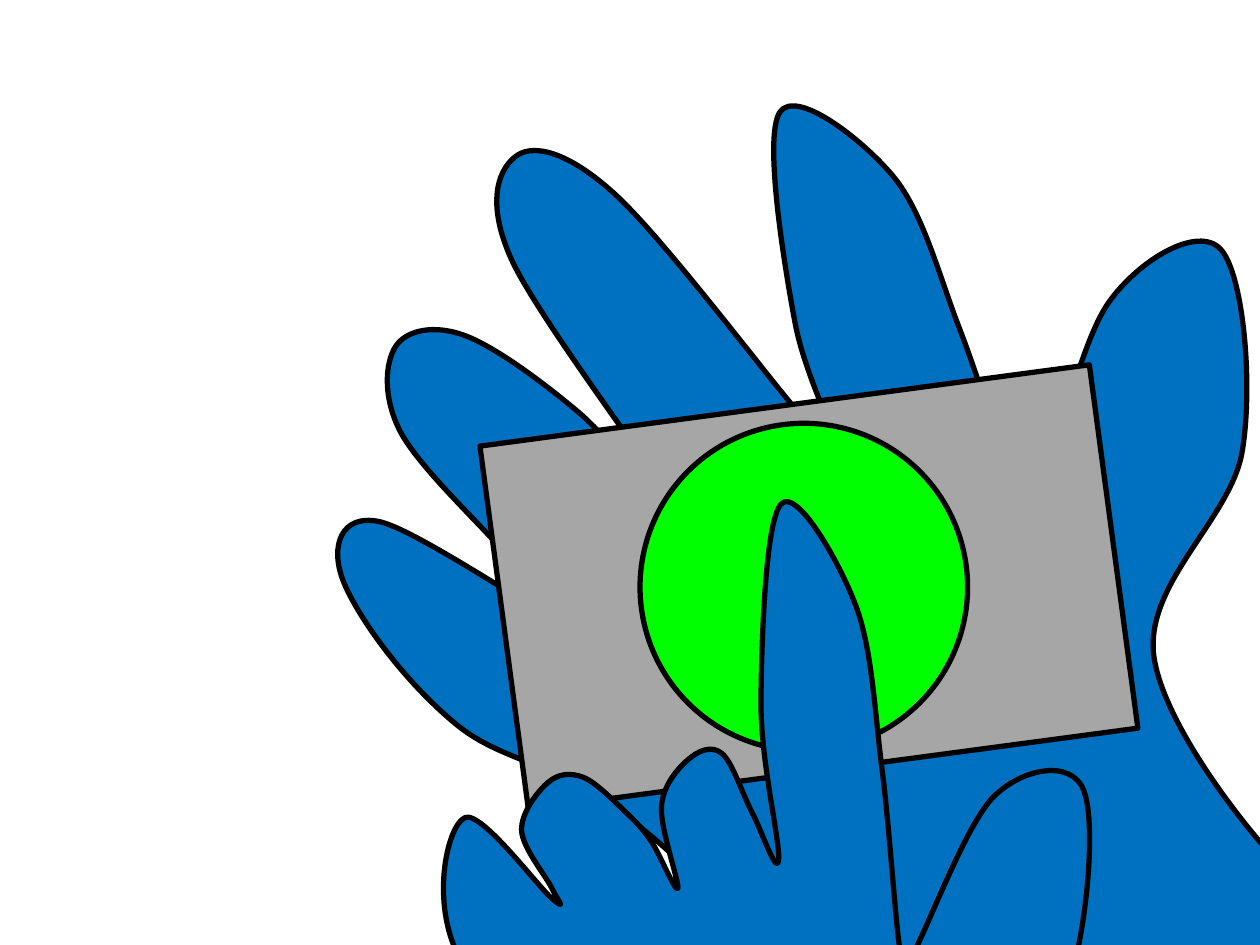
from itertools import chain

from lxml import etree
from pptx import Presentation
from pptx import util as u
from pptx.dml import color
from pptx.enum import shapes
from pptx.oxml import ns

HUES = {"hand": "0070C0", "card": "A6A6A6", "disc": "00FF00", "edge": "000000"}

HOLDING = {
    "wrist": [(10.39, 7.09), (9.16, 5.22)],
    "thumb": [(9.86, 3.58), (9.69, 1.98), (8.8, 2.4), (8.22, 4.05)],
    "index": [(8.09, 3.98), (7.62, 2.62), (7.09, 1.4), (6.19, 0.89), (6.31, 2.56), (6.73, 3.76)],
    "middle": [(6.3, 3.23), (4.88, 1.54), (4.11, 1.23), (4.06, 2.06), (5.43, 4.13)],
    "ring": [(4.59, 3.27), (3.68, 2.66), (3.14, 2.75), (3.18, 3.43), (4.01, 4.39), (4.54, 4.98)],
    "little": [(3.01, 4.14), (2.72, 4.6), (3.61, 5.74)],
    "heel": [(5.3, 6.75), (8.66, 10.27)],
}

PRESSING = {
    "wrist": [(8.72, 12.01), (7.74, 9.04)],
    "thumb": [(8.49, 7.79), (8.6, 6.27), (7.89, 6.32), (7.22, 7.62)],
    "index": [(7.14, 7.52), (7, 6.1), (6.79, 4.8), (6.2, 4), (6.04, 5.57), (6.18, 6.82)],
    "middle": [(5.97, 6.45), (5.73, 5.98), (5.46, 6.03), (5.25, 6.4), (5.38, 7.05)],
    "ring": [(5.17, 6.68), (4.97, 6.45), (4.63, 6.17), (4.35, 6.21), (4.14, 6.59), (4.38, 7.05)],
    "little": [(4.39, 7.14), (3.69, 6.49), (3.6, 7.5)],
    "heel": [(4.69, 9.03), (6.63, 13.47)],
}


def shift(knot, start, end):
    """Move a knot by a sixth of the way from start to end."""
    return tuple(k + (e - s) / 6 for k, s, e in zip(knot, start, end))


def smooth(knots, lead=None):
    """Return the Bezier points of a Catmull-Rom curve, steered at its start by lead."""
    line = [lead or knots[0], *knots, knots[-1]]
    dots = [knots[0]]
    for before, here, there, after in zip(line, line[1:], line[2:], line[3:]):
        dots += [shift(here, before, there), shift(there, after, here), there]
    return dots


class Sketch:
    """Draws outlined shapes in one style on the current slide."""

    def __init__(self, slide, edge=3):
        self.slide = slide
        self.edge = u.Pt(edge)

    def paint(self, shape, hue):
        """Give a shape its fill and outline."""
        shape.shadow.inherit = False
        shape.fill.solid()
        shape.fill.fore_color.rgb = color.RGBColor.from_string(HUES[hue])
        shape.line.color.rgb = color.RGBColor.from_string(HUES["edge"])
        shape.line.width = self.edge
        return shape

    def form(self, kind, mid, size, hue, turn=0):
        """Add a preset shape around its middle."""
        corner = [m - s / 2 for m, s in zip(mid, size)]
        shape = self.slide.shapes.add_shape(kind, *map(u.Inches, (*corner, *size)))
        shape.rotation = turn
        return self.paint(shape, hue)

    def curve(self, knots, hue, lead=None):
        """Add an open outline that runs smoothly through its knots."""
        dots = [(u.Inches(x), u.Inches(y)) for x, y in smooth(knots, lead)]
        pen = self.slide.shapes.build_freeform(*dots[0])
        pen.add_line_segments(dots[1:], close=False)
        shape = pen.convert_to_shape()
        legs = list(shape.element.iter(ns.qn("a:lnTo")))
        track = legs[0].getparent()
        for i in range(0, len(legs), 3):
            bend = etree.SubElement(track, ns.qn("a:cubicBezTo"))
            for leg in legs[i:i + 3]:
                bend.append(leg[0])
                track.remove(leg)
        return self.paint(shape, hue)

    def hand(self, parts, lead=None):
        """Add a hand from its parts, in order from wrist to heel."""
        return self.curve(list(chain(*parts.values())), "hand", lead)


def main():
    """Build the slide of one hand holding a card and one pressing its button."""
    deck = Presentation()
    deck.slide_width, deck.slide_height = u.Inches(10), u.Inches(7.5)
    art = Sketch(deck.slides.add_slide(deck.slide_layouts[6]))
    art.hand(HOLDING, lead=(11.38, 7.14))
    art.form(shapes.MSO_SHAPE.RECTANGLE, (6.42, 4.66), (4.88, 2.91), "card", turn=-7.6)
    art.form(shapes.MSO_SHAPE.OVAL, (6.38, 4.66), (2.6, 2.6), "disc")
    art.hand(PRESSING)
    deck.save("out.pptx")


if __name__ == "__main__":
    main()
